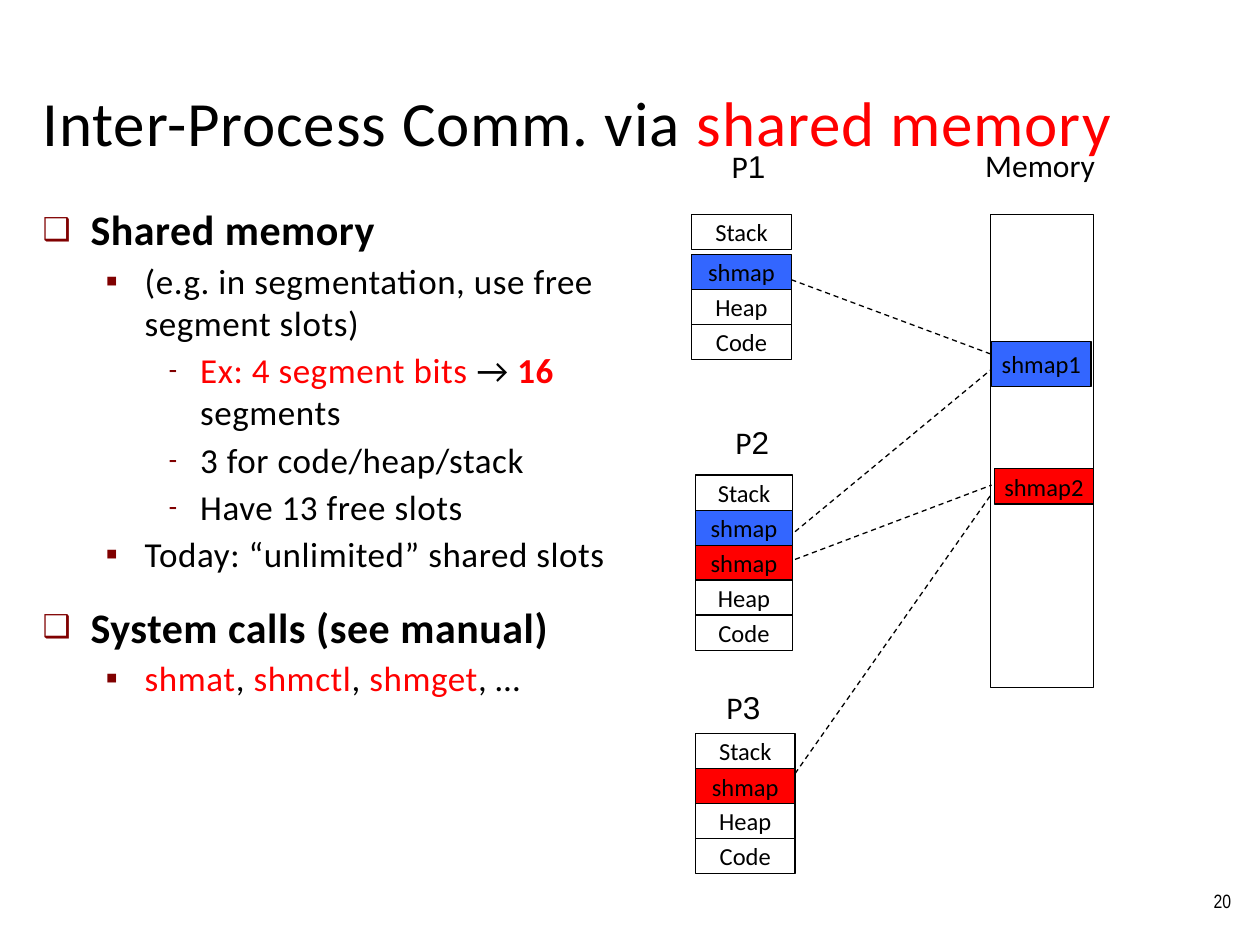
from lxml.etree import SubElement
from pptx import Presentation
from pptx.dml.color import RGBColor
from pptx.enum.dml import MSO_LINE
from pptx.enum.shapes import MSO_CONNECTOR, MSO_SHAPE
from pptx.enum.text import MSO_ANCHOR, PP_ALIGN
from pptx.oxml.ns import qn
from pptx.util import Inches, Pt

COLORS = {"black": "000000", "white": "FFFFFF", "red": "FF0000",
          "blue": "3366FF", "maroon": "800000"}


def write(para, spans, size, align=PP_ALIGN.LEFT, spacing=0):
    """Fill a paragraph with (text, colour, bold, font) spans; spacing is in points."""
    para.alignment = align
    for text, color, bold, font in spans:
        span = para.add_run()
        span.text = text
        span.font.size = Pt(size)
        span.font.name = font
        span.font.bold = bold
        span.font.color.rgb = RGBColor.from_string(COLORS[color])
        if spacing:
            span._r.get_or_add_rPr().set("spc", str(int(spacing * 100)))


def add_box(page, left, top, width, height, label, fill=None):
    box = page.shapes.add_shape(MSO_SHAPE.RECTANGLE, Inches(left), Inches(top),
                                Inches(width), Inches(height))
    box.shadow.inherit = False
    if fill:
        box.fill.solid()
        box.fill.fore_color.rgb = RGBColor.from_string(COLORS[fill])
    else:
        box.fill.background()
    box.line.color.rgb = RGBColor.from_string(COLORS["black"])
    box.line.width = Pt(0.75)
    frame = box.text_frame
    frame.word_wrap = False
    frame.vertical_anchor = MSO_ANCHOR.MIDDLE
    if label:
        write(frame.paragraphs[0], [(label, "black", False, "Calibri")], 14, PP_ALIGN.CENTER)


deck = Presentation()
deck.slide_width, deck.slide_height = Inches(10), Inches(7.5)
page = deck.slides.add_slide(deck.slide_layouts[6])

# Title, page number and diagram captions
captions = [
    (0.24, 0.31, 9.51, 1, 36, PP_ALIGN.LEFT, MSO_ANCHOR.BOTTOM, 0.5,
     [("Inter-Process Comm. via ", "black", False, "Calibri"),
      ("shared memory", "red", False, "Calibri")]),
    (8.79, 6.95, 1.08, 0.4, 11, PP_ALIGN.RIGHT, MSO_ANCHOR.MIDDLE, 0,
     [("20", "black", False, "Arial Narrow")]),
    (7.72, 1.11, 1.07, 0.4, 18, PP_ALIGN.CENTER, MSO_ANCHOR.TOP, 0,
     [("Memory", "black", False, "Calibri")]),
]
for number, left, top in [("1", 5.65, 1.12), ("2", 5.68, 3.31), ("3", 5.61, 5.41)]:
    captions.append((left, top, 0.58, 0.4, 18, PP_ALIGN.CENTER, MSO_ANCHOR.TOP, 0,
                     [("P", "black", False, "Calibri"), (number, "black", False, "Arial")]))

for left, top, width, height, size, align, anchor, spacing, spans in captions:
    caption = page.shapes.add_textbox(Inches(left), Inches(top), Inches(width), Inches(height))
    caption.text_frame.word_wrap = True
    caption.text_frame.vertical_anchor = anchor
    write(caption.text_frame.paragraphs[0], spans, size, align, spacing)

# Bulleted list: (level, [(text, colour, bold)])
items = [
    (0, [("Shared memory", "black", True)]),
    (1, [("(e.g. in segmentation, use free segment slots)", "black", False)]),
    (2, [("Ex: 4 segment bits ", "red", False), ("→ ", "black", False),
         ("16 ", "red", True), ("segments", "black", False)]),
    (2, [("3 for code/heap/stack", "black", False)]),
    (2, [("Have 13 free slots", "black", False)]),
    (1, [("Today: “unlimited” shared slots", "black", False)]),
    (0, [("System calls (see manual)", "black", True)]),
    (1, [("shmat", "red", False), (", ", "black", False), ("shmctl", "red", False),
         (", ", "black", False), ("shmget", "red", False), (", …", "black", False)]),
]
# Per level: text size, space before, left margin, hanging indent, bullet, bullet size in %
levels = [(24, 15, 0.38, 0.38, "❑", 75),
          (20, 3, 0.81, 0.31, "▪", 100),
          (20, 3, 1.25, 0.25, "-", 75)]

body = page.shapes.add_textbox(Inches(0.24), Inches(1.57), Inches(4.78), Inches(5.74)).text_frame
body.word_wrap = True
for index, (level, spans) in enumerate(items):
    size, before, margin, hanging, bullet, percent = levels[level]
    para = body.add_paragraph() if index else body.paragraphs[0]
    para.level = level
    para.space_before = Pt(before)
    write(para, [(*span, "Calibri") for span in spans], size, spacing=0.3)
    properties = para._p.get_or_add_pPr()
    properties.set("marL", str(Inches(margin)))
    properties.set("indent", str(-Inches(hanging)))
    bullet_color = SubElement(properties, qn("a:buClr"))
    SubElement(bullet_color, qn("a:srgbClr"), val=COLORS["maroon"])
    SubElement(properties, qn("a:buSzPct"), val=str(percent * 1000))
    SubElement(properties, qn("a:buFont"), typeface="Arial")
    SubElement(properties, qn("a:buChar"), char=bullet)

# Memory column
add_box(page, 7.86, 1.7, 0.82, 3.76, "", "white")
add_box(page, 7.89, 3.72, 0.79, 0.28, "shmap2", "red")

# Links from process segments to memory
for x1, y1, x2, y2 in [(6.28, 2.22, 7.89, 2.82), (6.31, 4.22, 7.87, 2.93),
                       (6.31, 4.44, 7.87, 3.85), (6.31, 6.14, 7.87, 3.92)]:
    link = page.shapes.add_connector(MSO_CONNECTOR.STRAIGHT, Inches(x1), Inches(y1),
                                     Inches(x2), Inches(y2))
    link.line.color.rgb = RGBColor.from_string(COLORS["black"])
    link.line.width = Pt(0.75)
    link.line.dash_style = MSO_LINE.DASH
    SubElement(link._element.spPr, qn("a:effectLst"))

add_box(page, 7.87, 2.71, 0.79, 0.36, "shmap1", "blue")

# Process address spaces: left, width, top of the stack, top of the rest, segments below the stack
row = 0.277
processes = [
    (5.49, 0.79, 1.7, 2.02, [("shmap", "blue"), ("Heap", None), ("Code", None)]),
    (5.52, 0.77, 3.77, 4.05, [("shmap", "blue"), ("shmap", "red"), ("Heap", None), ("Code", None)]),
    (5.52, 0.79, 5.82, 6.1, [("shmap", "red"), ("Heap", None), ("Code", None)]),
]
for left, width, stack_top, rest_top, segments in processes:
    add_box(page, left, stack_top, width, 0.28, "Stack")
    for index, (label, fill) in enumerate(segments):
        add_box(page, left, rest_top + index * row, width, 0.28, label, fill)

deck.save("out.pptx")
